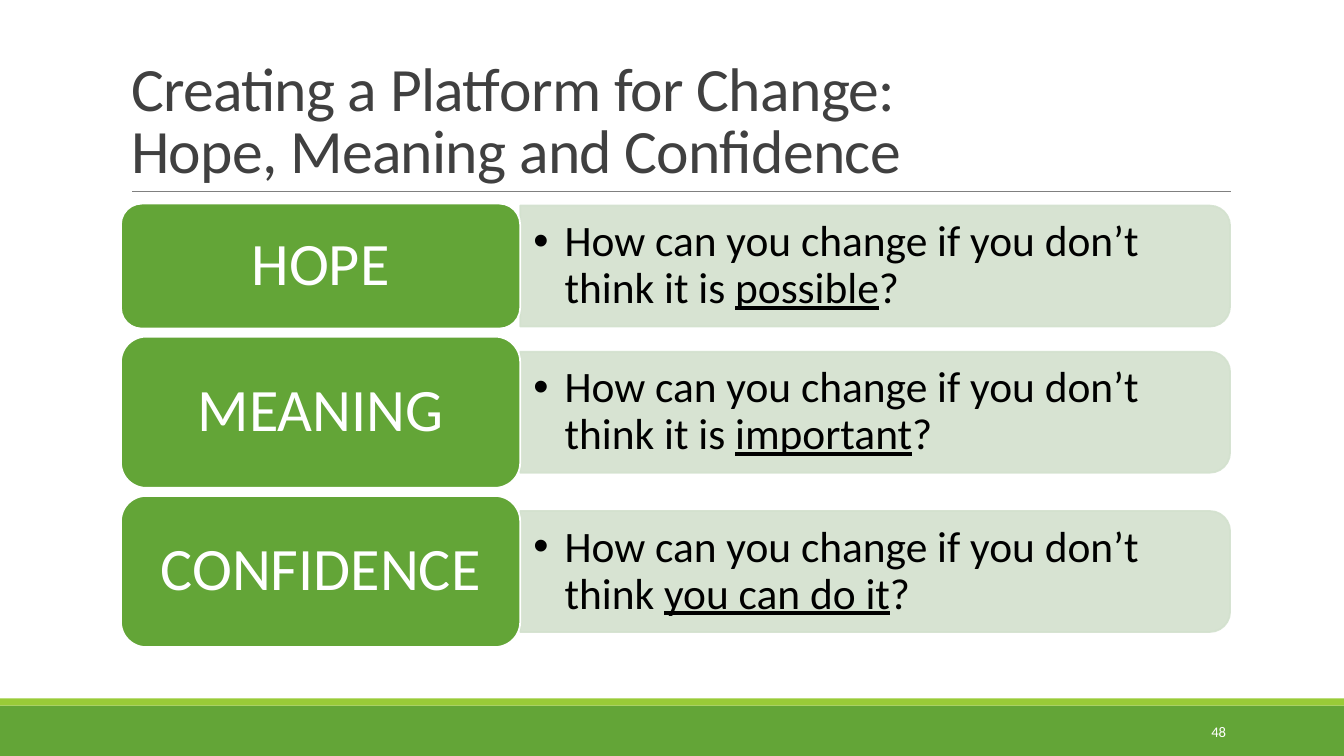
from dataclasses import dataclass

from lxml import etree
from pptx import Presentation
from pptx import util as u
from pptx.dml.color import RGBColor
from pptx.enum import shapes, text
from pptx.oxml.ns import qn


@dataclass(frozen=True)
class Theme:
    font: str = "Calibri"
    green: str = "63A537"
    lime: str = "99CB38"
    pale: str = "D3E1CE"
    rule: str = "808080"
    title: str = "404040"
    body: str = "000000"
    white: str = "FFFFFF"
    title_size: float = 44
    label_size: float = 43
    body_size: float = 31
    number_size: float = 10.5


class SlideBuilder:
    def __init__(self, slide, theme):
        self.slide = slide
        self.theme = theme

    def style(self, paragraph, size, color, align=text.PP_ALIGN.LEFT, spacing=0.9):
        paragraph.alignment = align
        paragraph.line_spacing = spacing
        paragraph.font.name = self.theme.font
        paragraph.font.size = u.Pt(size)
        paragraph.font.color.rgb = RGBColor.from_string(color)

    def frame(self, shape, anchor, inset_x=0.1, inset_y=0.05):
        frame = shape.text_frame
        frame.word_wrap = True
        frame.auto_size = text.MSO_AUTO_SIZE.NONE
        frame.vertical_anchor = anchor
        frame.margin_left = frame.margin_right = u.Inches(inset_x)
        frame.margin_top = frame.margin_bottom = u.Inches(inset_y)
        return frame

    def title(self, box, wording):
        shape = self.slide.shapes.title
        shape.left, shape.top, shape.width, shape.height = map(u.Inches, box)
        frame = self.frame(shape, text.MSO_ANCHOR.BOTTOM)
        frame.text = wording
        paragraph = frame.paragraphs[0]
        self.style(paragraph, self.theme.title_size, self.theme.title, spacing=0.85)
        for run in paragraph.runs:
            run._r.get_or_add_rPr().set("spc", "-50")

    def shape(self, kind, box, fill, line=None, opacity=None):
        shape = self.slide.shapes.add_shape(kind, *map(u.Inches, box))
        shape.shadow.inherit = False
        shape.fill.solid()
        shape.fill.fore_color.rgb = RGBColor.from_string(fill)
        if line:
            shape.line.color.rgb = RGBColor.from_string(line)
            shape.line.width = u.Pt(1.25)
        else:
            shape.line.fill.background()
        if opacity:
            for color in shape._element.spPr.iter(qn("a:srgbClr")):
                etree.SubElement(color, qn("a:alpha"), val=str(opacity * 1000))
        return shape

    def rule(self, left, right, top):
        line = self.slide.shapes.add_connector(
            shapes.MSO_CONNECTOR.STRAIGHT, *map(u.Inches, (left, top, right, top)))
        line.line.color.rgb = RGBColor.from_string(self.theme.rule)
        line.line.width = u.Pt(0.5)
        etree.SubElement(line._element.spPr, qn("a:effectLst"))

    def label(self, box, wording):
        shape = self.shape(shapes.MSO_SHAPE.ROUNDED_RECTANGLE, box,
                           self.theme.green, self.theme.white)
        frame = self.frame(shape, text.MSO_ANCHOR.MIDDLE, 0.18, 0.09)
        frame.text = wording
        self.style(frame.paragraphs[0], self.theme.label_size, self.theme.white,
                   text.PP_ALIGN.CENTER)

    def panel(self, left, middle, length, thickness):
        # Turned a quarter so that the rounded top faces right
        box = (left + (length - thickness) / 2, middle - length / 2, thickness, length)
        shape = self.shape(shapes.MSO_SHAPE.ROUND_2_SAME_RECTANGLE, box,
                           self.theme.pale, self.theme.pale, opacity=90)
        shape.rotation = 90

    def question(self, box, opening, stressed):
        shape = self.slide.shapes.add_textbox(*map(u.Inches, box))
        frame = self.frame(shape, text.MSO_ANCHOR.MIDDLE, 0.13, 0.06)
        paragraph = frame.paragraphs[0]
        properties = paragraph._p.get_or_add_pPr()
        properties.set("marL", str(u.Inches(0.31)))
        properties.set("indent", str(-u.Inches(0.31)))
        etree.SubElement(properties, qn("a:buFont"), typeface="Arial")
        etree.SubElement(properties, qn("a:buChar"), char="•")
        for wording in (opening, stressed, "?"):
            run = paragraph.add_run()
            run.text = wording
            if wording == stressed:
                run.font.underline = True
        self.style(paragraph, self.theme.body_size, self.theme.body)

    def number(self, box, wording):
        shape = self.slide.shapes.add_textbox(*map(u.Inches, box))
        frame = self.frame(shape, text.MSO_ANCHOR.MIDDLE)
        frame.text = wording
        self.style(frame.paragraphs[0], self.theme.number_size, self.theme.white,
                   text.PP_ALIGN.RIGHT, 1.0)


def main():
    presentation = Presentation()
    presentation.slide_width = u.Inches(13.33)
    presentation.slide_height = u.Inches(7.5)
    theme = Theme()
    builder = SlideBuilder(
        presentation.slides.add_slide(presentation.slide_layouts[5]), theme)

    # Footer bands and title
    builder.shape(shapes.MSO_SHAPE.RECTANGLE, (0, 7, 13.33, 0.5), theme.green)
    builder.shape(shapes.MSO_SHAPE.RECTANGLE, (0, 6.93, 13.33, 0.07), theme.lime)
    builder.rule(1.31, 12.21, 1.9)
    builder.title((1.2, 0.31, 11, 1.59),
                  "Creating a Platform for Change: \vHope, Meaning and Confidence")

    # Rows: label, height, question opening, underlined words
    rows = [
        ("HOPE", 1.24, "How can you change if you don’t think it is ", "possible"),
        ("MEANING", 1.5, "How can you change if you don’t think it is ", "important"),
        ("CONFIDENCE", 1.5, "How can you change if you don’t think ", "you can do it"),
    ]
    left, label_width, gap, top = 1.2, 3.96, 0.08, 2.02
    panel_left = left + label_width
    for name, height, opening, stressed in rows:
        middle = top + height / 2
        builder.panel(panel_left, middle, 7.04, 1.2)
        builder.question((panel_left, middle - 0.54, 6.98, 1.08), opening, stressed)
        builder.label((left, top, label_width, height), name)
        top += height + gap

    # Slide number
    builder.number((10.83, 7.06, 1.43, 0.4), "48")

    presentation.save("out.pptx")


if __name__ == "__main__":
    main()
